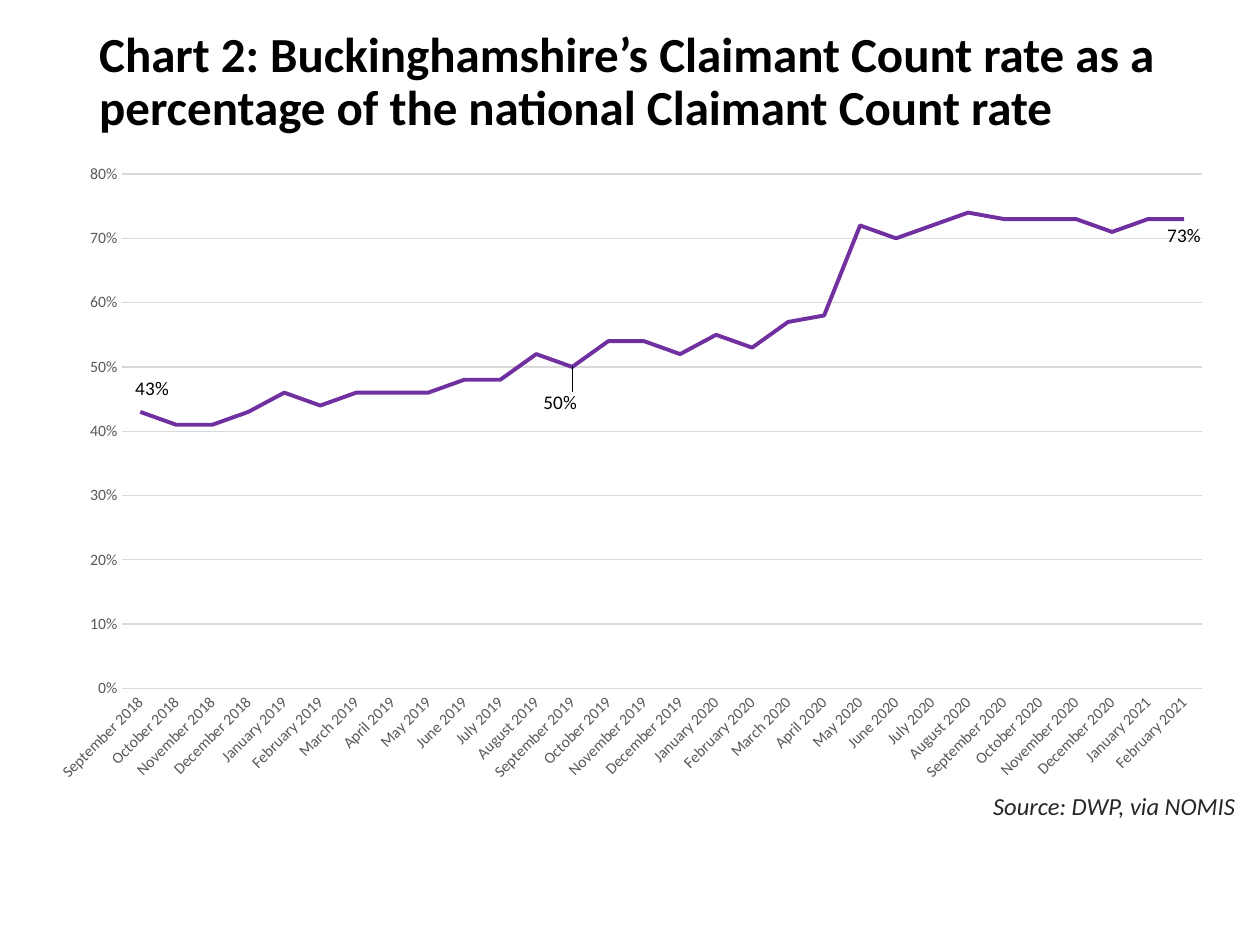
"""Build the slide charting Buckinghamshire's Claimant Count rate against the national rate."""
from lxml.etree import SubElement
from pptx import Presentation
from pptx.chart.data import CategoryChartData
from pptx.dml.color import RGBColor
from pptx.enum.chart import XL_CHART_TYPE as ChartType
from pptx.enum.chart import XL_LABEL_POSITION as LabelPosition
from pptx.enum.chart import XL_TICK_MARK as TickMark
from pptx.enum.text import MSO_ANCHOR as Anchor
from pptx.enum.text import PP_ALIGN as Align
from pptx.oxml.ns import qn
from pptx.util import Cm, Pt

BLACK = RGBColor(0x00, 0x00, 0x00)
DARK_GREY = RGBColor(0x26, 0x26, 0x26)
AXIS_GREY = RGBColor(0x59, 0x59, 0x59)
GRID_GREY = RGBColor(0xD9, 0xD9, 0xD9)
PURPLE = RGBColor(0x70, 0x30, 0xA0)
FONT = "Calibri"

MONTHS = ["January", "February", "March", "April", "May", "June", "July",
          "August", "September", "October", "November", "December"]
FIRST_MONTH, FIRST_YEAR = 8, 2018
RATES = [0.43, 0.41, 0.41, 0.43, 0.46, 0.44, 0.46, 0.46, 0.46, 0.48,
         0.48, 0.52, 0.5, 0.54, 0.54, 0.52, 0.55, 0.53, 0.57, 0.58,
         0.72, 0.7, 0.72, 0.74, 0.73, 0.73, 0.73, 0.71, 0.73, 0.73]
LABELS = [(0, LabelPosition.ABOVE, 0.01, -0.01),
          (12, LabelPosition.BELOW, -0.01, 0.03),
          (29, LabelPosition.BELOW, 0, 0)]


def style_font(font, size, color):
    font.name = FONT
    font.size = Pt(size)
    font.color.rgb = color


def add_layout(parent, index, **settings):
    layout = parent.makeelement(qn("c:layout"))
    manual = SubElement(layout, qn("c:manualLayout"))
    for name, value in settings.items():
        SubElement(manual, qn(f"c:{name}")).set("val", str(value))
    parent.insert(index, layout)


presentation = Presentation()
presentation.slide_width = Cm(25.4)
presentation.slide_height = Cm(19.05)
slide = presentation.slides.add_slide(presentation.slide_layouts[6])

title = slide.shapes.add_textbox(Cm(1.75), Cm(0.38), Cm(21.9), Cm(2.59))
title.text_frame.word_wrap = True
title.text_frame.vertical_anchor = Anchor.MIDDLE
paragraph = title.text_frame.paragraphs[0]
paragraph.line_spacing = 0.9
run = paragraph.add_run()
run.text = ("Chart 2: Buckinghamshire’s Claimant Count rate as a "
            "percentage of the national Claimant Count rate")
style_font(run.font, 28, BLACK)
run.font.bold = True

source = slide.shapes.add_textbox(Cm(19.1), Cm(15.82), Cm(6.05), Cm(0.86))
source.text_frame.word_wrap = True
paragraph = source.text_frame.paragraphs[0]
paragraph.alignment = Align.RIGHT
run = paragraph.add_run()
run.text = "Source: DWP, via NOMIS"
style_font(run.font, 14, DARK_GREY)
run.font.italic = True

chart_data = CategoryChartData(number_format="0%")
chart_data.categories = [
    f"{MONTHS[month % 12]} {FIRST_YEAR + month // 12}"
    for month in range(FIRST_MONTH, FIRST_MONTH + len(RATES))]
chart_data.add_series("Series 1", RATES)
chart = slide.shapes.add_chart(
    ChartType.LINE, Cm(0.69), Cm(3.07), Cm(24), Cm(12.93), chart_data).chart
chart.has_title = False
chart.has_legend = False
style_font(chart.font, 10, BLACK)

plot = chart.plots[0]
plot.vary_by_categories = False
plot_area = chart._chartSpace.chart.plotArea
for layout in plot_area.findall(qn("c:layout")):
    plot_area.remove(layout)
add_layout(plot_area, 0, layoutTarget="inner", xMode="edge", yMode="edge",
           x=0.074, y=0.034, w=0.907, h=0.802)

category_axis, value_axis = chart.category_axis, chart.value_axis
for axis in (category_axis, value_axis):
    axis.major_tick_mark = TickMark.NONE
    axis.minor_tick_mark = TickMark.NONE
    style_font(axis.tick_labels.font, 9, AXIS_GREY)
category_axis._element.txPr.bodyPr.set("rot", "-2700000")
value_axis.minimum_scale = 0
value_axis.maximum_scale = 0.8
value_axis.major_unit = 0.1
value_axis.tick_labels.number_format = "0%"
value_axis.tick_labels.number_format_is_linked = False
value_axis.format.line.fill.background()
for line in (category_axis.format.line, value_axis.major_gridlines.format.line):
    line.color.rgb = GRID_GREY
    line.width = Pt(0.75)

series = plot.series[0]
series.smooth = False
series.format.line.color.rgb = PURPLE
series.format.line.width = Pt(2.25)
for index, position, shift_x, shift_y in LABELS:
    label = series.points[index].data_label
    label.position = position
    style_font(label.font, 11, BLACK)
    if shift_x or shift_y:
        add_layout(label._dLbl, 1, x=shift_x, y=shift_y)
series.data_labels.show_value = False
series.data_labels.number_format = "0%"
series.data_labels.number_format_is_linked = False

presentation.save("out.pptx")
